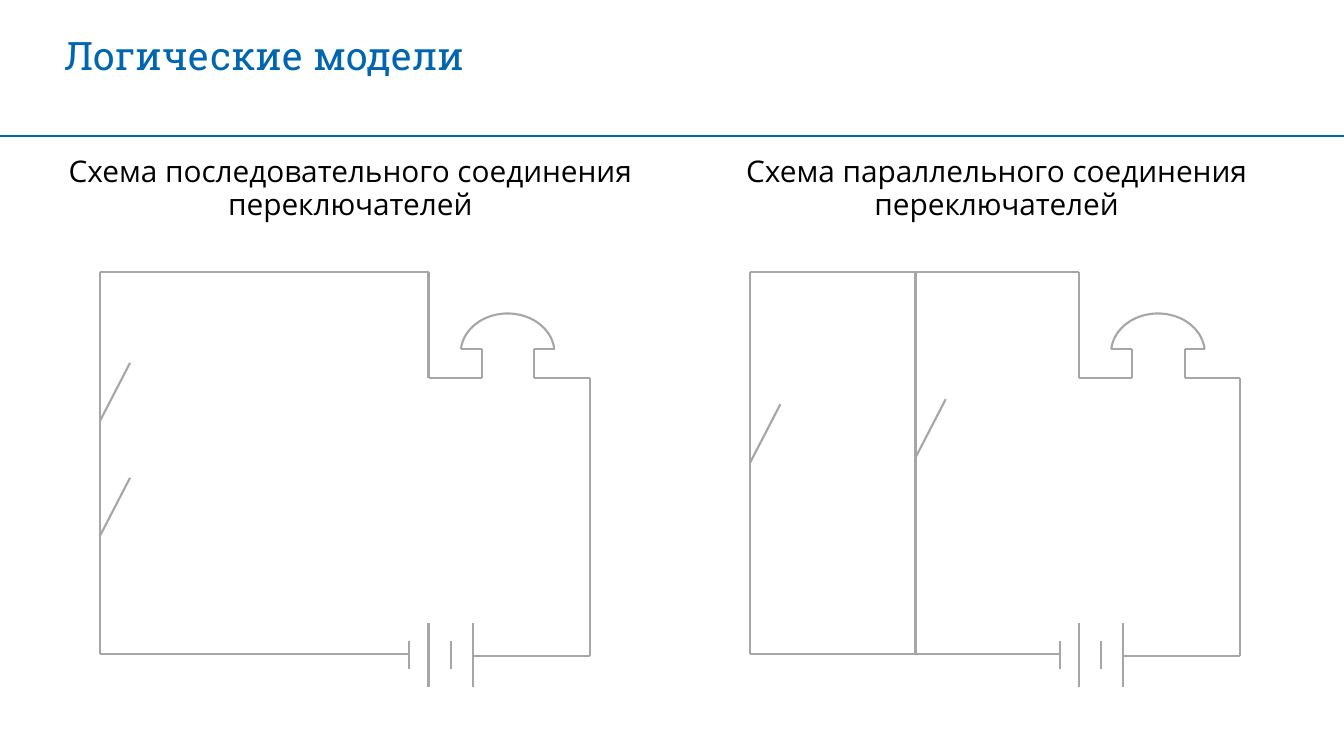
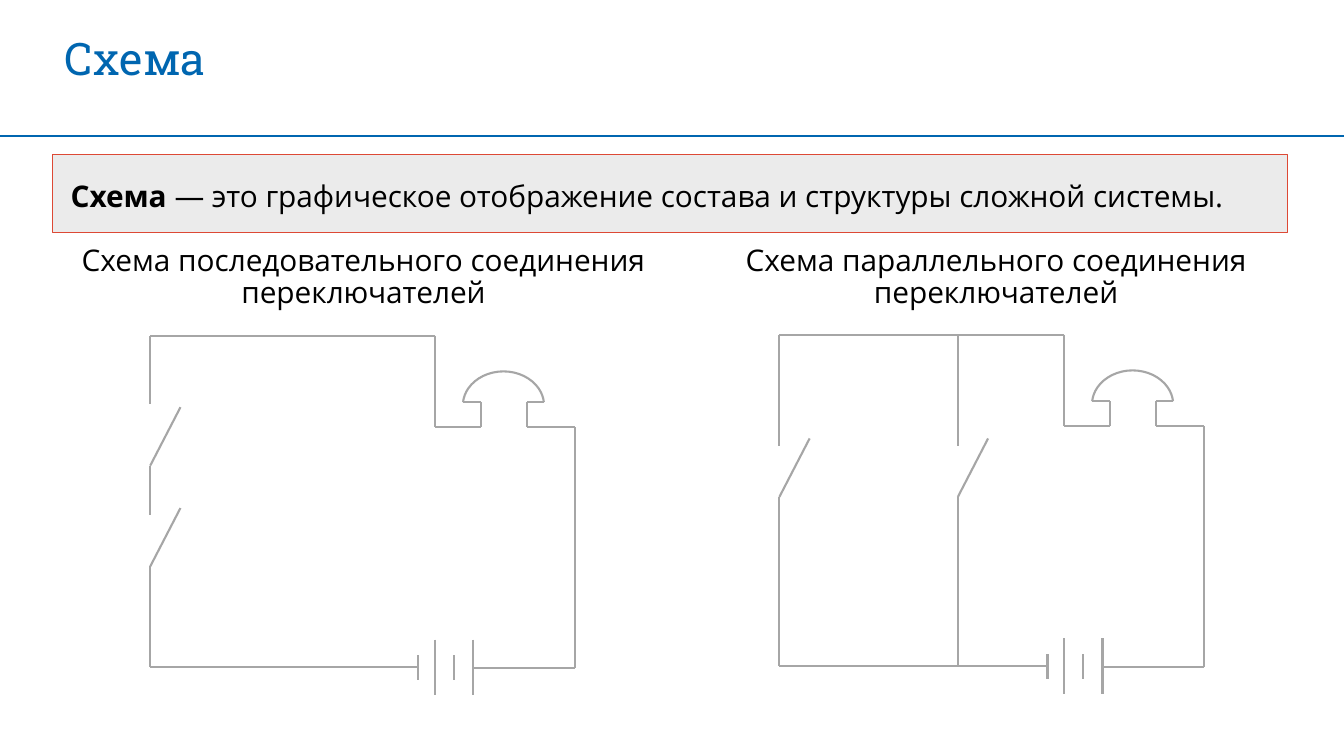
from itertools import pairwise

from lxml.etree import SubElement
from pptx import Presentation
from pptx.dml.color import RGBColor
from pptx.enum.shapes import MSO_CONNECTOR, MSO_SHAPE
from pptx.enum.text import MSO_ANCHOR, PP_ALIGN
from pptx.oxml.ns import qn
from pptx.util import Inches, Pt

COLORS = {
    "accent": "0066B0",
    "text": "000000",
    "wire": "A6A6A6",
    "panel": "D9D9D9",
    "border": "DD4935",
}
TITLE_FONT = "Roboto Slab"
BODY_FONT = "Open Sans"
BODY_SIZE = 21.3
SERIES = "Схема последовательного соединения переключателей"
PARALLEL = "Схема параллельного соединения переключателей"
BASE_WIDTH = 4.86


def color(name):
    return RGBColor.from_string(COLORS[name])


def set_font(p, name, size, color_name):
    p.font.name = name
    p.font.size = Pt(size)
    p.font.color.rgb = color(color_name)


def add_line(shapes, start, end, color_name="wire", width=1.5):
    line = shapes.add_connector(
        MSO_CONNECTOR.STRAIGHT, *(Inches(v) for v in (*start, *end))
    )
    line.line.color.rgb = color(color_name)
    line.line.width = Pt(width)
    SubElement(line._element.spPr, qn("a:effectLst"))


def add_wire(shapes, *points):
    for start, end in pairwise(points):
        add_line(shapes, start, end)


def add_titled_slide(prs, text, size, height):
    s = prs.slides.add_slide(prs.slide_layouts[5])
    title = s.shapes.title
    title.left, title.top = Inches(0.54), Inches(0.31)
    title.width, title.height = Inches(12.25), Inches(height)
    tf = title.text_frame
    tf.text = text
    tf.vertical_anchor = MSO_ANCHOR.TOP
    p = tf.paragraphs[0]
    p.alignment = PP_ALIGN.LEFT
    p.line_spacing = 0.9
    set_font(p, TITLE_FONT, size, "accent")
    add_line(s.shapes, (0, 1.35), (13.33, 1.35), "accent", 1)
    return s


def add_caption(s, text, left, top, width):
    box = s.shapes.add_textbox(
        Inches(left), Inches(top), Inches(width), Inches(0.82)
    )
    tf = box.text_frame
    tf.word_wrap = True
    tf.text = text
    p = tf.paragraphs[0]
    p.alignment = PP_ALIGN.CENTER
    p.line_spacing = 0.9
    set_font(p, BODY_FONT, BODY_SIZE, "text")


def add_definition(s, term, meaning):
    sp = s.shapes.add_shape(
        MSO_SHAPE.RECTANGLE, Inches(0.52), Inches(1.53), Inches(12.25), Inches(0.78)
    )
    sp.shadow.inherit = False
    sp.fill.solid()
    sp.fill.fore_color.rgb = color("panel")
    fill = sp._element.spPr.find(qn("a:solidFill"))
    SubElement(fill[0], qn("a:alpha"), val="50000")
    sp.line.color.rgb = color("border")
    sp.line.width = Pt(1)
    tf = sp.text_frame
    tf.word_wrap = True
    tf.vertical_anchor = MSO_ANCHOR.TOP
    tf.margin_left = tf.margin_right = Inches(0.18)
    tf.margin_top = tf.margin_bottom = Inches(0.18)
    p = tf.paragraphs[0]
    p.alignment = PP_ALIGN.LEFT
    p.line_spacing = Pt(29.3)
    set_font(p, BODY_FONT, BODY_SIZE, "text")
    r = p.add_run()
    r.text = term
    r.font.bold = True
    p.add_run().text = meaning


def add_branch(shapes, x, top, bottom, switches):
    start = top
    for pivot, gap in switches:
        add_wire(shapes, (x, start), (x, pivot - gap))
        add_wire(shapes, (x, pivot), (x + 0.3, pivot - 0.58))
        start = pivot
    add_wire(shapes, (x, start), (x, bottom))


def add_bell(shapes, left, top, scale):
    arc = shapes.add_shape(
        MSO_SHAPE.ARC,
        Inches(left), Inches(top), Inches(0.93 * scale), Inches(0.78 * scale),
    )
    arc.adjustments[0] = 110.81
    arc.adjustments[1] = 213.14
    arc.shadow.inherit = False
    arc.fill.background()
    arc.line.color.rgb = color("wire")
    arc.line.width = Pt(1.5)


def add_circuit(s, left, top, width, branches):
    scale = width / BASE_WIDTH
    shapes = s.shapes.add_group_shape().shapes

    def at(x, y):
        return left + x * scale, top + y * scale

    add_wire(shapes, at(0, 0), at(3.26, 0), at(3.26, 1.05),
             at(3.79, 1.05), at(3.79, 0.76), at(3.58, 0.76))
    add_wire(shapes, at(4.51, 0.76), at(4.31, 0.76), at(4.31, 1.05),
             at(4.86, 1.05), at(4.86, 3.81), at(3.7, 3.81))
    add_wire(shapes, at(3.07, 3.79), at(0, 3.79))
    add_bell(shapes, *at(3.58, 0.41), scale)
    for x, half in ((3.07, 0.14), (3.26, 0.32), (3.48, 0.14), (3.7, 0.32)):
        add_wire(shapes, at(x, 3.8 - half), at(x, 3.8 + half))
    bottom = at(0, 3.79)[1]
    for offset, switches in branches:
        add_branch(shapes, left + offset, top, bottom, switches)


def add_models_slide(prs):
    s = add_titled_slide(prs, "Логические модели", 28, 0.57)
    add_caption(s, SERIES, 0.54, 1.51, 5.87)
    add_caption(s, PARALLEL, 6.95, 1.51, 5.87)
    add_circuit(s, 0.99, 2.7, 4.86, [(0, [(4.18, 0), (5.32, 0)])])
    add_circuit(s, 7.44, 2.7, 4.86, [(0, [(4.59, 0)]), (1.64, [(4.54, 0)])])


def add_scheme_slide(prs):
    s = add_titled_slide(prs, "Схема", 32, 0.64)
    add_definition(
        s, "Схема ", "— это графическое отображение состава и структуры сложной системы."
    )
    add_caption(s, SERIES, 0.54, 2.39, 6.13)
    add_caption(s, PARALLEL, 6.95, 2.39, 5.86)
    add_circuit(s, 1.49, 3.33, 4.21, [(0, [(4.62, 0.61), (5.62, 0.51)])])
    add_circuit(s, 7.73, 3.32, 4.21,
                [(0, [(4.93, 0.51)]), (1.77, [(4.93, 0.51)])])


def main():
    prs = Presentation()
    prs.slide_width = Inches(13.33)
    prs.slide_height = Inches(7.5)
    add_models_slide(prs)
    add_scheme_slide(prs)
    prs.save("out.pptx")


if __name__ == "__main__":
    main()
